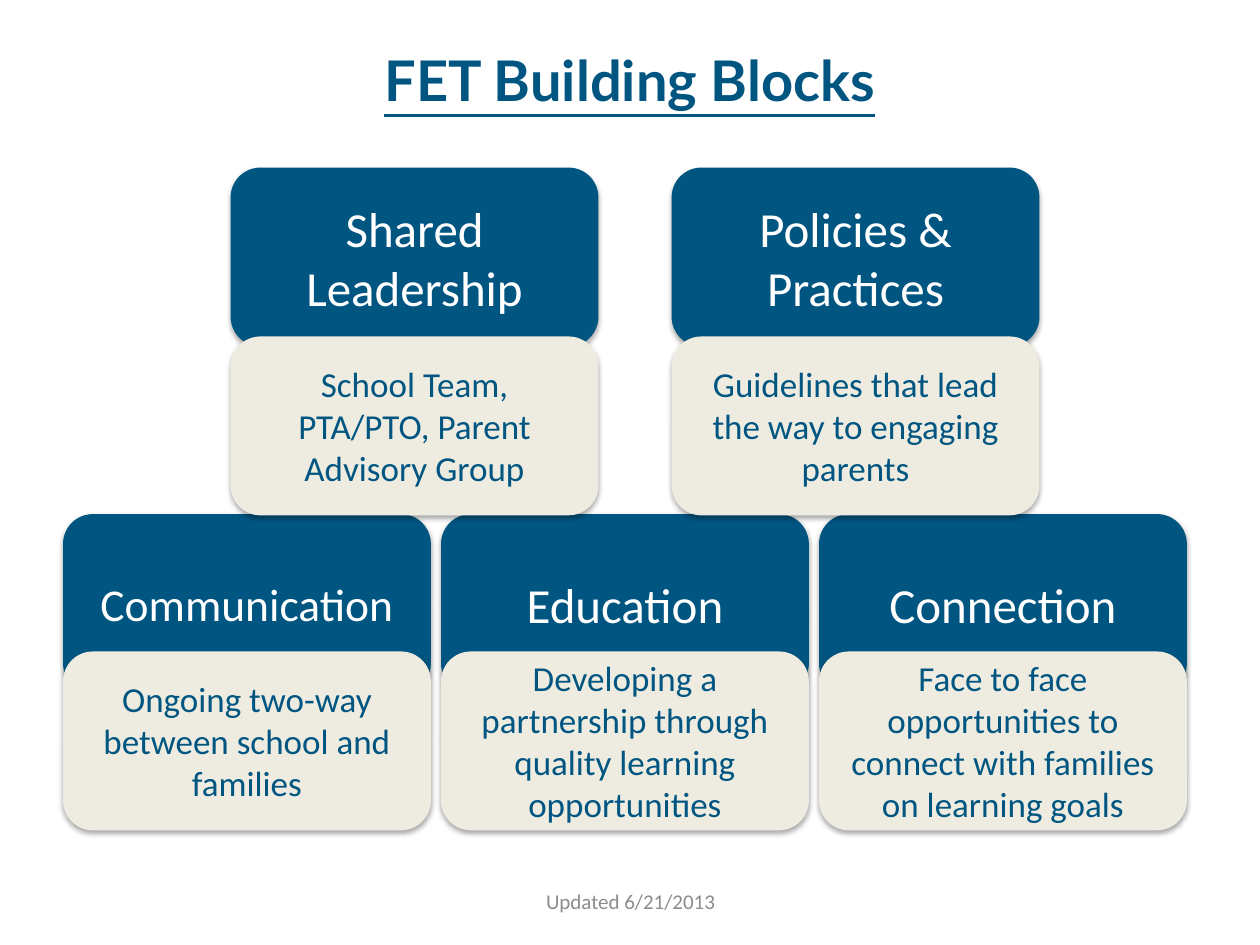
from dataclasses import dataclass

from lxml import etree
from pptx import Presentation
from pptx.dml.color import RGBColor
from pptx.enum import shapes, text
from pptx.oxml import ns
from pptx.util import Inches, Pt


@dataclass(frozen=True)
class Theme:
    blue: str = "005581"
    cream: str = "EEECE1"
    white: str = "FFFFFF"
    gray: str = "8C8C8C"
    font: str = "Calibri"
    title_font: str = "Lato"
    title: int = 32
    head: int = 28
    long_head: int = 26
    body: int = 20
    note: int = 12


THEME = Theme()
WIDTH, HEIGHT = 2.92, 1.42

# Each row: left of first block, step, top of heads, top of bodies, blocks
ROWS = [
    (0.5, 3, 4.08, 5.17, [
        ("Communication", THEME.long_head,
         "Ongoing two-way between school and families"),
        ("Education", THEME.head,
         "Developing a partnership through quality learning opportunities"),
        ("Connection", THEME.head,
         "Face to face opportunities to connect with families on learning goals"),
    ]),
    (1.83, 3.5, 1.33, 2.67, [
        ("Shared Leadership", THEME.head,
         "School Team, PTA/PTO, Parent Advisory Group"),
        ("Policies & Practices", THEME.head,
         "Guidelines that lead the way to engaging parents"),
    ]),
]


def write(shape, words, *, size, color, font=THEME.font, bold=False, line=False):
    frame = shape.text_frame
    frame.word_wrap = True
    frame.vertical_anchor = text.MSO_ANCHOR.MIDDLE
    para = frame.paragraphs[0]
    para.alignment = text.PP_ALIGN.CENTER
    run = para.add_run()
    run.text = words
    run.font.name = font
    run.font.size = Pt(size)
    run.font.bold = bold
    run.font.underline = line
    run.font.color.rgb = RGBColor.from_string(color)


def add_shadow(shape):
    """Give the shape a soft shadow straight below it."""
    shape.shadow.inherit = False
    effects = shape.element.spPr.find(ns.qn("a:effectLst"))
    shadow = etree.SubElement(
        effects, ns.qn("a:outerShdw"), blurRad=str(Pt(3.1)), dist=str(Pt(1.8)),
        dir="5400000", rotWithShape="0")
    color = etree.SubElement(shadow, ns.qn("a:srgbClr"), val="000000")
    etree.SubElement(color, ns.qn("a:alpha"), val="35000")


def add_block(slide, left, top, words, fill, **style):
    block = slide.shapes.add_shape(
        shapes.MSO_SHAPE.ROUNDED_RECTANGLE,
        Inches(left), Inches(top), Inches(WIDTH), Inches(HEIGHT))
    block.fill.solid()
    block.fill.fore_color.rgb = RGBColor.from_string(fill)
    block.line.fill.background()
    add_shadow(block)
    write(block, words, **style)


def add_label(slide, left, top, width, height, words, **style):
    box = slide.shapes.add_textbox(
        Inches(left), Inches(top), Inches(width), Inches(height))
    write(box, words, **style)


def add_heads(slide):
    for left, step, top, _, blocks in ROWS:
        for i, (head, size, _) in enumerate(blocks):
            add_block(slide, left + i * step, top, head, THEME.blue,
                      size=size, color=THEME.white)


def add_bodies(slide):
    for left, step, _, top, blocks in ROWS:
        for i, (_, _, body) in enumerate(blocks):
            add_block(slide, left + i * step, top, body, THEME.cream,
                      size=THEME.body, color=THEME.blue)


def main():
    deck = Presentation()
    deck.slide_width, deck.slide_height = Inches(10), Inches(7.5)
    slide = deck.slides.add_slide(deck.slide_layouts[6])
    add_heads(slide)
    add_bodies(slide)
    add_label(slide, 0.5, 0, 9, 1.25, "FET Building Blocks", size=THEME.title,
              color=THEME.blue, font=THEME.title_font, bold=True, line=True)
    add_label(slide, 3.42, 6.95, 3.17, 0.4, "Updated 6/21/2013",
              size=THEME.note, color=THEME.gray)
    deck.save("out.pptx")


if __name__ == "__main__":
    main()
